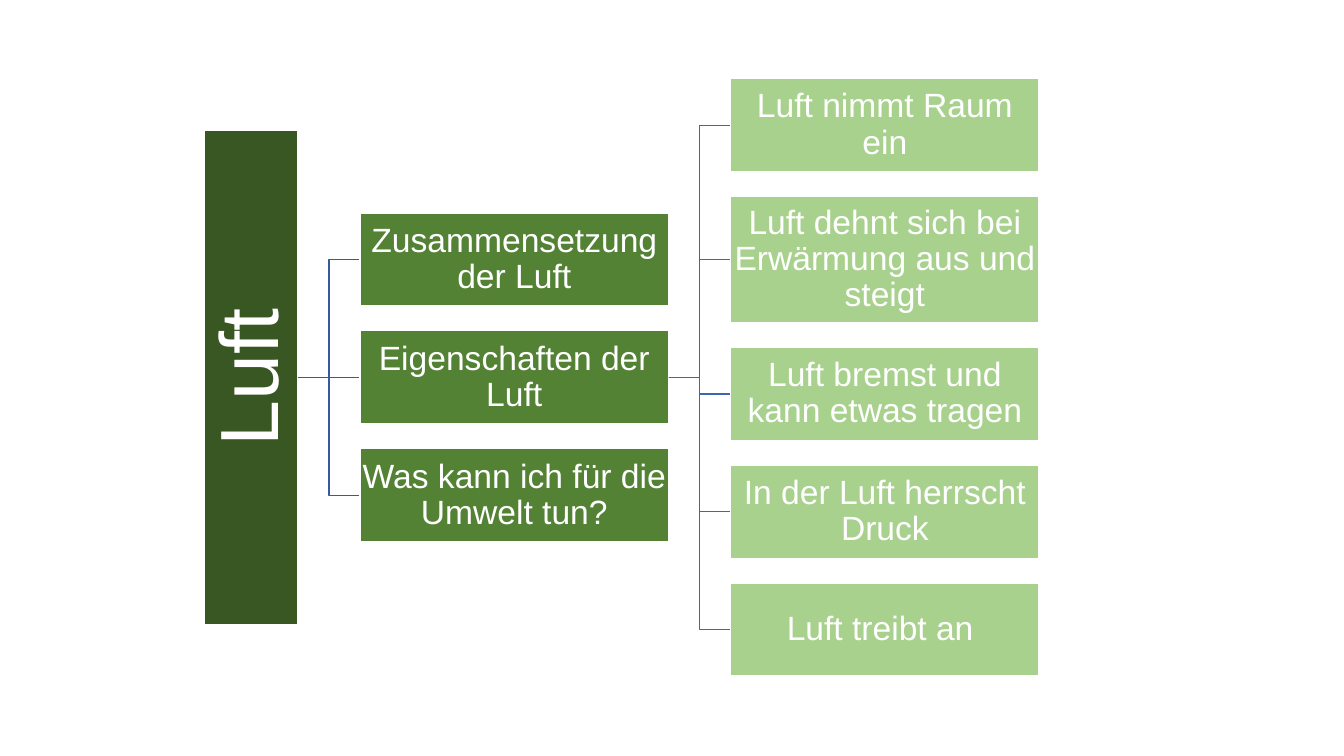
from pptx import Presentation
from pptx.dml.color import RGBColor
from pptx.enum.shapes import MSO_CONNECTOR, MSO_SHAPE
from pptx.enum.text import MSO_ANCHOR, PP_ALIGN
from pptx.oxml import parse_xml
from pptx.util import Cm, Pt

RECT, STRAIGHT = MSO_SHAPE.RECTANGLE, MSO_CONNECTOR.STRAIGHT
MIDDLE, CENTER = MSO_ANCHOR.MIDDLE, PP_ALIGN.CENTER

WHITE = RGBColor(0xFF, 0xFF, 0xFF)
DARK_GREEN = RGBColor(0x38, 0x57, 0x23)
GREEN = RGBColor(0x54, 0x82, 0x35)
LIGHT_GREEN = RGBColor(0xA9, 0xD1, 0x8E)
DARK_BLUE = RGBColor(0x36, 0x5B, 0x9D)
BLUE = RGBColor(0x3E, 0x67, 0xB2)

ROOT = "Luft"
TOPICS = [
    ("Zusammensetzung der Luft", 2.35),
    ("Eigenschaften der Luft", 2.35),
    ("Was kann ich für die Umwelt tun?", 2.35),
]
PROPERTIES = [
    ("Luft nimmt Raum ein", 2.35),
    ("Luft dehnt sich bei Erwärmung aus und steigt", 3.18),
    ("Luft bremst und kann etwas tragen", 2.35),
    ("In der Luft herrscht Druck", 2.35),
    ("Luft treibt an ", 2.35),
]

MID_Y = 9.51
ROOT_LEFT, ROOT_LENGTH, ROOT_WIDTH = 5.16, 12.47, 2.35
BOX_WIDTH = 7.78
COLUMN_GAP, ROW_GAP = 1.56, 0.62
TOPIC_LEFT = ROOT_LEFT + ROOT_WIDTH + COLUMN_GAP
PROPERTY_LEFT = TOPIC_LEFT + BOX_WIDTH + COLUMN_GAP

prs = Presentation()
prs.slide_width, prs.slide_height = Cm(33.87), Cm(19.05)
s = prs.slides.add_slide(prs.slide_layouts[6])


def rows(items):
    top = MID_Y - (sum(h for _, h in items) + ROW_GAP * (len(items) - 1)) / 2
    for text, height in items:
        yield text, top, height
        top += height + ROW_GAP


def add_box(text, left, top, width, height, color, size=24, inset=0.04):
    sp = s.shapes.add_shape(RECT, Cm(left), Cm(top), Cm(width), Cm(height))
    sp.shadow.inherit = False
    sp.fill.solid()
    sp.fill.fore_color.rgb = color
    sp.line.color.rgb = WHITE
    sp.line.width = Pt(1)
    tf = sp.text_frame
    tf.text = text
    tf.word_wrap = True
    tf.vertical_anchor = MIDDLE
    tf.margin_left = tf.margin_right = tf.margin_top = tf.margin_bottom = Cm(inset)
    p = tf.paragraphs[0]
    p.alignment = CENTER
    p.line_spacing = 0.9
    font = p.runs[0].font
    font.name, font.size, font.color.rgb = "Arial", Pt(size), WHITE
    return sp


def add_branch(right, y, color):
    left, mid = right - COLUMN_GAP, right - COLUMN_GAP / 2
    if abs(y - MID_Y) < 0.01:
        sp = s.shapes.add_connector(STRAIGHT, Cm(left), Cm(MID_Y), Cm(right), Cm(MID_Y))
        sp._element.spPr.append(parse_xml(
            '<a:effectLst xmlns:a="http://schemas.openxmlformats.org/drawingml/2006/main"/>'))
    else:
        fb = s.shapes.build_freeform(Cm(left), Cm(MID_Y))
        fb.add_line_segments(
            [(Cm(mid), Cm(MID_Y)), (Cm(mid), Cm(y)), (Cm(right), Cm(y))], close=False)
        sp = fb.convert_to_shape()
        sp.shadow.inherit = False
        sp.fill.background()
    sp.line.color.rgb = color
    sp.line.width = Pt(1)


def add_column(items, left, fill, line):
    for _, top, height in rows(items):
        add_branch(left, top + height / 2, line)
    for text, top, height in rows(items):
        add_box(text, left, top, BOX_WIDTH, height, fill)


root = add_box(ROOT, ROOT_LEFT + (ROOT_WIDTH - ROOT_LENGTH) / 2, MID_Y - ROOT_WIDTH / 2,
               ROOT_LENGTH, ROOT_WIDTH, DARK_GREEN, size=59, inset=0.1)
root.rotation = 270
add_column(TOPICS, TOPIC_LEFT, GREEN, DARK_BLUE)
add_column(PROPERTIES, PROPERTY_LEFT, LIGHT_GREEN, BLUE)

prs.save("out.pptx")
